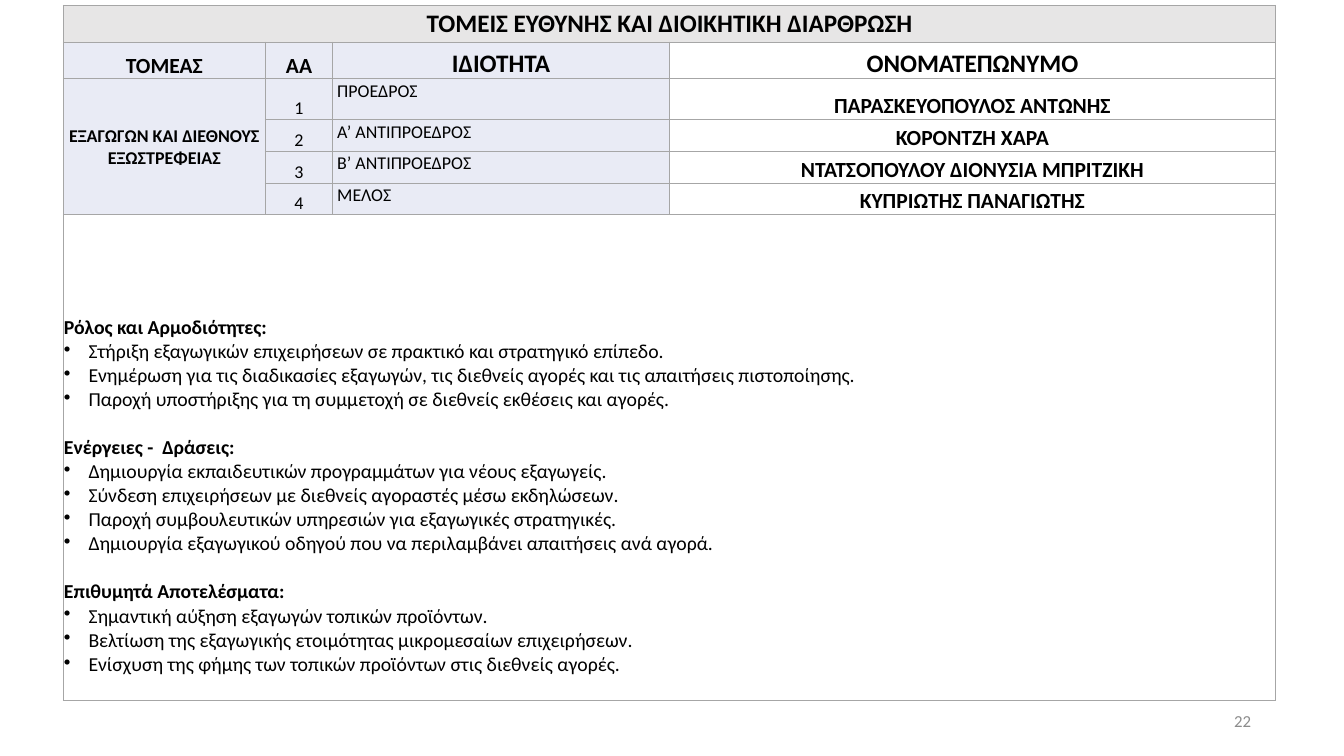
import pptx
import pptx.dml.color
import pptx.enum.text
import pptx.oxml
import pptx.oxml.ns
import pptx.util

WIDTH, HEIGHT = 20.79, 11.69
FONT = "Calibri"
COLORS = {
    "text": "000000",
    "title": "E7E6E6",
    "label": "E9EBF5",
    "plain": "FFFFFF",
    "border": "A6A6A6",
    "number": "8C8C8C",
}
ALIGN = pptx.enum.text.PP_ALIGN
ANCHOR = pptx.enum.text.MSO_ANCHOR

TABLE_LEFT, TABLE_TOP, TABLE_WIDTH = 0.98, 0.08, 18.75
COLUMN_SHARES = [3, 1, 5, 9]
ROW_HEIGHTS = [0.57, 0.57, 0.63, 0.49, 0.49, 0.49, 7.51]
MARGINS = (0.01, 0.01, 0.01, 0)
LAST_ROW = len(ROW_HEIGHTS) - 1
HEADING_GAP = 26.8
BULLET_INDENT = 0.38

TITLE = "ΤΟΜΕΙΣ ΕΥΘΥΝΗΣ ΚΑΙ ΔΙΟΙΚΗΤΙΚΉ ΔΙΑΡΘΡΩΣΗ"
HEADERS = [("ΤΟΜΕΑΣ", 24), ("ΑΑ", 24), ("ΙΔΙΟΤΗΤΑ", 28), ("ΟΝΟΜΑΤΕΠΩΝΥΜΟ", 28)]
SECTOR = "ΕΞΑΓΩΓΩΝ ΚΑΙ ΔΙΕΘΝΟΥΣ ΕΞΩΣΤΡΕΦΕΙΑΣ"
MEMBERS = [
    ("ΠΡΟΕΔΡΟΣ", "ΠΑΡΑΣΚΕΥΟΠΟΥΛΟΣ ΑΝΤΩΝΗΣ"),
    ("Α’ ΑΝΤΙΠΡΟΕΔΡΟΣ", "ΚΟΡΟΝΤΖΗ ΧΑΡΑ"),
    ("Β’ ΑΝΤΙΠΡΟΕΔΡΟΣ", "ΝΤΑΤΣΟΠΟΥΛΟΥ ΔΙΟΝΥΣΙΑ ΜΠΡΙΤΖΙΚΗ"),
    ("ΜΕΛΟΣ", "ΚΥΠΡΙΩΤΗΣ ΠΑΝΑΓΙΩΤΗΣ"),
]
SECTIONS = {
    "Ρόλος και Αρμοδιότητες:": [
        "Στήριξη εξαγωγικών επιχειρήσεων σε πρακτικό και στρατηγικό επίπεδο.",
        "Ενημέρωση για τις διαδικασίες εξαγωγών, τις διεθνείς αγορές και τις απαιτήσεις πιστοποίησης.",
        "Παροχή υποστήριξης για τη συμμετοχή σε διεθνείς εκθέσεις και αγορές.",
    ],
    "Ενέργειες -  Δράσεις:": [
        "Δημιουργία εκπαιδευτικών προγραμμάτων για νέους εξαγωγείς.",
        "Σύνδεση επιχειρήσεων με διεθνείς αγοραστές μέσω εκδηλώσεων.",
        "Παροχή συμβουλευτικών υπηρεσιών για εξαγωγικές στρατηγικές.",
        "Δημιουργία εξαγωγικού οδηγού που να περιλαμβάνει απαιτήσεις ανά αγορά.",
    ],
    "Επιθυμητά Αποτελέσματα:": [
        "Σημαντική αύξηση εξαγωγών τοπικών προϊόντων.",
        "Βελτίωση της εξαγωγικής ετοιμότητας μικρομεσαίων επιχειρήσεων.",
        "Ενίσχυση της φήμης των τοπικών προϊόντων στις διεθνείς αγορές.",
    ],
}


def inches(value):
    return pptx.util.Inches(value)


def rgb(name):
    return pptx.dml.color.RGBColor.from_string(COLORS[name])


def write(paragraph, text, size, bold=False, align=ALIGN.CENTER, color="text"):
    paragraph.text = text
    paragraph.alignment = align
    font = paragraph.font
    font.name, font.size, font.bold = FONT, pptx.util.Pt(size), bold
    font.color.rgb = rgb(color)


def set_margins(target, margins):
    sides = ("margin_left", "margin_top", "margin_right", "margin_bottom")
    for side, value in zip(sides, margins):
        setattr(target, side, inches(value))


def add_borders(cell):
    properties = cell._tc.get_or_add_tcPr()
    for position, side in enumerate(("lnL", "lnR", "lnT", "lnB")):
        properties.insert(position, pptx.oxml.parse_xml(
            f'<a:{side} {pptx.oxml.ns.nsdecls("a")} w="12700"><a:solidFill>'
            f'<a:srgbClr val="{COLORS["border"]}"/></a:solidFill></a:{side}>'))


def add_bullet(paragraph):
    properties = paragraph._p.get_or_add_pPr()
    properties.set("marL", str(inches(BULLET_INDENT)))
    properties.set("indent", str(-inches(BULLET_INDENT)))
    bullet = pptx.oxml.parse_xml(f'<a:buChar {pptx.oxml.ns.nsdecls("a")} char="•"/>')
    # The bullet comes before the default run properties
    properties.find(pptx.oxml.ns.qn("a:defRPr")).addprevious(bullet)


def fill_cell(cell, text, size, bold=False, anchor=ANCHOR.BOTTOM):
    cell.vertical_anchor = anchor
    write(cell.text_frame.paragraphs[0], text, size, bold)


def fill_role(cell, role):
    cell.vertical_anchor = ANCHOR.TOP
    set_margins(cell, (0.07, 0, 0.07, 0))
    paragraph = cell.text_frame.paragraphs[0]
    write(paragraph, role, 20, align=ALIGN.LEFT)
    paragraph.line_spacing = 1.07
    paragraph.space_after = pptx.util.Pt(8)


def fill_sections(cell):
    cell.vertical_anchor = ANCHOR.BOTTOM
    cell.margin_bottom = inches(0.37)
    frame = cell.text_frame
    for index, (heading, items) in enumerate(SECTIONS.items()):
        paragraph = frame.add_paragraph() if index else frame.paragraphs[0]
        write(paragraph, heading, 22, True, ALIGN.LEFT)
        if index:
            paragraph.space_before = pptx.util.Pt(HEADING_GAP)
        for item in items:
            paragraph = frame.add_paragraph()
            write(paragraph, item, 22, align=ALIGN.LEFT)
            add_bullet(paragraph)


def add_grid(slide):
    table = slide.shapes.add_table(
        len(ROW_HEIGHTS), len(COLUMN_SHARES), inches(TABLE_LEFT), inches(TABLE_TOP),
        inches(TABLE_WIDTH), inches(sum(ROW_HEIGHTS))).table
    table.first_row = table.horz_banding = False
    for column, share in zip(table.columns, COLUMN_SHARES):
        column.width = inches(TABLE_WIDTH * share / sum(COLUMN_SHARES))
    for row, height in zip(table.rows, ROW_HEIGHTS):
        row.height = inches(height)
    for row_index, row in enumerate(table.rows):
        for column_index, cell in enumerate(row.cells):
            plain = row_index == LAST_ROW or column_index == 3
            color = "title" if row_index == 0 else "plain" if plain else "label"
            cell.fill.solid()
            cell.fill.fore_color.rgb = rgb(color)
            set_margins(cell, MARGINS)
            add_borders(cell)
    for row_index in (0, LAST_ROW):
        table.cell(row_index, 0).merge(table.cell(row_index, 3))
    table.cell(2, 0).merge(table.cell(LAST_ROW - 1, 0))
    return table


def add_page_number(slide, text):
    box = slide.shapes.add_textbox(
        inches(WIDTH * 0.706), inches(HEIGHT * 0.927),
        inches(WIDTH * 0.225), inches(HEIGHT * 0.053))
    frame = box.text_frame
    frame.word_wrap = True
    frame.vertical_anchor = ANCHOR.MIDDLE
    set_margins(frame, (0, 0, 0, 0))
    write(frame.paragraphs[0], text, 18.7, align=ALIGN.RIGHT, color="number")


def main():
    presentation = pptx.Presentation()
    presentation.slide_width, presentation.slide_height = inches(WIDTH), inches(HEIGHT)
    slide = presentation.slides.add_slide(presentation.slide_layouts[6])

    # Title and column headers
    table = add_grid(slide)
    fill_cell(table.cell(0, 0), TITLE, 28, True, ANCHOR.MIDDLE)
    for column, (header, size) in enumerate(HEADERS):
        fill_cell(table.cell(1, column), header, size, True)

    # Sector and its members
    fill_cell(table.cell(2, 0), SECTOR, 20, True, ANCHOR.MIDDLE)
    for number, (role, name) in enumerate(MEMBERS, start=1):
        row = number + 1
        fill_cell(table.cell(row, 1), str(number), 20)
        fill_role(table.cell(row, 2), role)
        fill_cell(table.cell(row, 3), name, 24, True)

    # Role, actions and results
    fill_sections(table.cell(LAST_ROW, 0))
    add_page_number(slide, "22")
    presentation.save("out.pptx")


if __name__ == "__main__":
    main()
